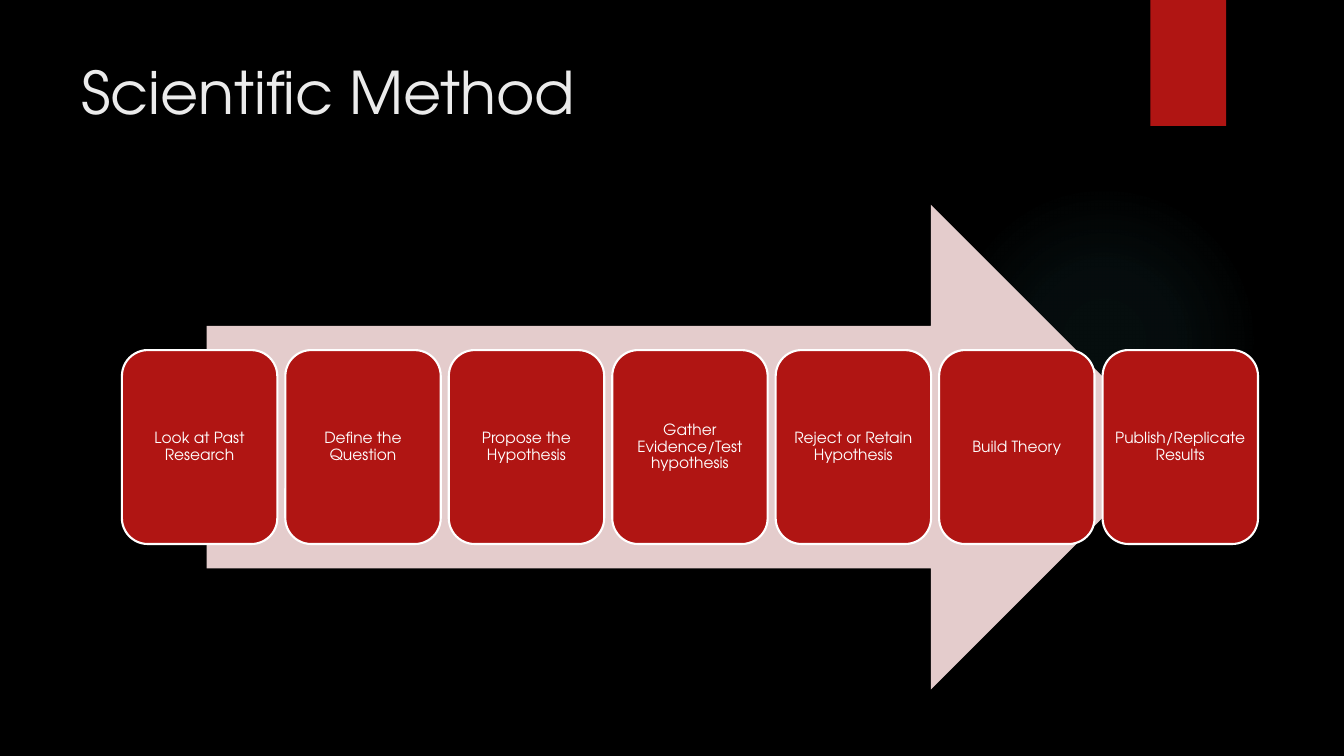
"""Build the Scientific Method process slide."""
from dataclasses import dataclass

from lxml import etree
from pptx import Presentation
from pptx.dml.color import RGBColor
from pptx.enum.shapes import MSO_SHAPE
from pptx.enum.text import MSO_ANCHOR, MSO_AUTO_SIZE, PP_ALIGN
from pptx.oxml import parse_xml
from pptx.oxml.ns import nsdecls, qn
from pptx.util import Pt

RECTANGLE, ELLIPSE = MSO_SHAPE.RECTANGLE, MSO_SHAPE.OVAL
ARROW, CARD = MSO_SHAPE.RIGHT_ARROW, MSO_SHAPE.ROUNDED_RECTANGLE
TOP, MIDDLE = MSO_ANCHOR.TOP, MSO_ANCHOR.MIDDLE
LEFT, CENTER = PP_ALIGN.LEFT, PP_ALIGN.CENTER
NO_AUTOFIT = MSO_AUTO_SIZE.NONE

TITLE = "Scientific Method"
STEPS = [
    "Look at Past Research",
    "Define the Question",
    "Propose the Hypothesis",
    "Gather Evidence/Test hypothesis",
    "Reject or Retain Hypothesis",
    "Build Theory",
    "Publish/Replicate Results",
]

SLIDE_SIZE = (960, 540)
TITLE_BOX = (51.1, 36, 741, 110)
GLOW_BOX = (677.5, 131.8, 221.8, 221.8)
RIBBON_BOX = (821.8, 0, 54, 90)
ARROW_BOX = (147.6, 146.2, 690.5, 346.3)
CARD_LEFT, CARD_PITCH = 87.1, 116.75
CARD_WIDTH, CARD_HEIGHT = 111, 138.5
GLOW_STOPS = [(0, 7), (36, 6), (69, 0)]


@dataclass(frozen=True)
class Theme:
    """Colours, font and type sizes."""
    background: str = "000000"
    accent: str = "B01513"
    arrow: str = "E4CCCC"
    glow: str = "50B9C1"
    title: str = "EBEBEB"
    white: str = "FFFFFF"
    font: str = "TeX Gyre Adventor"
    title_size: int = 42
    step_size: int = 11


THEME = Theme()


def write(frame, text, *, size, color, align, anchor, inset, spacing=1.0):
    """Put formatted text in a text frame."""
    frame.auto_size = NO_AUTOFIT
    frame.word_wrap = True
    frame.vertical_anchor = anchor
    frame.margin_left = frame.margin_right = Pt(inset[0])
    frame.margin_top = frame.margin_bottom = Pt(inset[1])
    paragraph = frame.paragraphs[0]
    paragraph.alignment = align
    paragraph.line_spacing = spacing
    run = paragraph.add_run()
    run.text = text
    run.font.name = THEME.font
    run.font.size = Pt(size)
    run.font.color.rgb = RGBColor.from_string(color)


def add_block(slide, preset, box, fill, outline=None):
    """Add a flat preset shape with an optional outline."""
    block = slide.shapes.add_shape(preset, *map(Pt, box))
    block.shadow.inherit = False
    block.fill.solid()
    block.fill.fore_color.rgb = RGBColor.from_string(fill)
    if outline:
        block.line.color.rgb = RGBColor.from_string(outline)
        block.line.width = Pt(1.5)
    else:
        block.line.fill.background()
    return block


def fade_radially(block, color, stops):
    """Replace a solid fill with a transparent radial gradient."""
    gradient = parse_xml(f'<a:gradFill {nsdecls("a")} rotWithShape="1"/>')
    stop_list = etree.SubElement(gradient, qn("a:gsLst"))
    for position, opacity in stops:
        stop = etree.SubElement(stop_list, qn("a:gs"), pos=str(position * 1000))
        tint = etree.SubElement(stop, qn("a:srgbClr"), val=color)
        etree.SubElement(tint, qn("a:alpha"), val=str(opacity * 1000))
    radial = etree.SubElement(gradient, qn("a:path"), path="circle")
    etree.SubElement(radial, qn("a:fillToRect"), l="50000", t="50000", r="50000", b="50000")
    properties = block.element.spPr
    properties.replace(properties.find(qn("a:solidFill")), gradient)


def main():
    """Compose and save the slide."""
    deck = Presentation()
    deck.slide_width, deck.slide_height = map(Pt, SLIDE_SIZE)
    slide = deck.slides.add_slide(deck.slide_layouts[5])
    slide.background.fill.solid()
    slide.background.fill.fore_color.rgb = RGBColor.from_string(THEME.background)

    heading = slide.shapes.title
    heading.left, heading.top, heading.width, heading.height = map(Pt, TITLE_BOX)
    write(heading.text_frame, TITLE, size=THEME.title_size, color=THEME.title,
          align=LEFT, anchor=TOP, inset=(7.2, 3.6))

    glow = add_block(slide, ELLIPSE, GLOW_BOX, THEME.glow)
    fade_radially(glow, THEME.glow, GLOW_STOPS)
    add_block(slide, RECTANGLE, RIBBON_BOX, THEME.accent)
    add_block(slide, ARROW, ARROW_BOX, THEME.arrow)

    card_top = ARROW_BOX[1] + (ARROW_BOX[3] - CARD_HEIGHT) / 2
    for index, step in enumerate(STEPS):
        box = (CARD_LEFT + index * CARD_PITCH, card_top, CARD_WIDTH, CARD_HEIGHT)
        card = add_block(slide, CARD, box, THEME.accent, THEME.white)
        write(card.text_frame, step, size=THEME.step_size, color=THEME.white,
              align=CENTER, anchor=MIDDLE, inset=(3, 3), spacing=0.9)

    deck.save("out.pptx")


if __name__ == "__main__":
    main()
